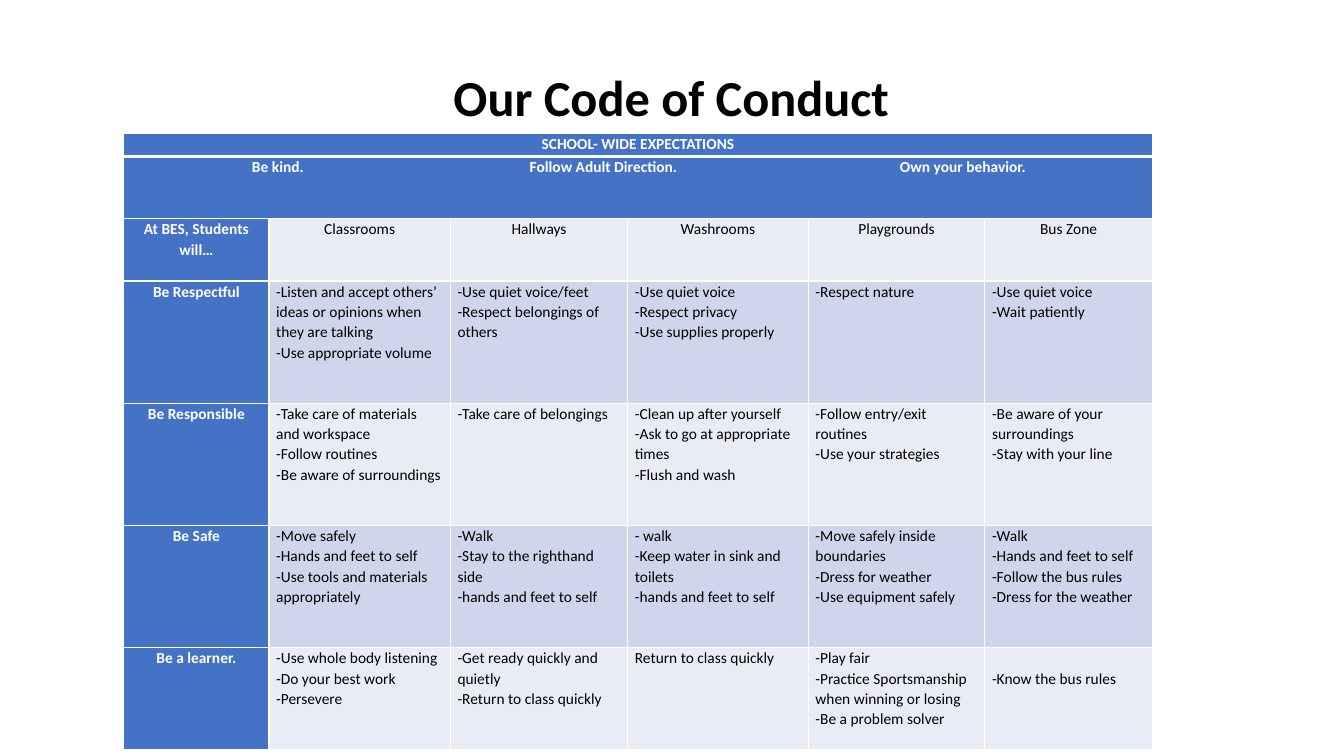
import pptx
import pptx.util
import pptx.dml.color
import pptx.enum.text
from lxml import etree
from pptx.oxml.ns import qn

Cm, Pt = pptx.util.Cm, pptx.util.Pt
RGBColor = pptx.dml.color.RGBColor
PP_ALIGN = pptx.enum.text.PP_ALIGN

TITLE = "Our Code of Conduct"
BANNER = "SCHOOL- WIDE EXPECTATIONS"
MOTTOS = ["Be kind.", "Follow Adult Direction.", "Own your behavior."]
MOTTO_TABS = [3.05, 10.05, 19.38]
PLACES = ["At BES, Students will…", "Classrooms", "Hallways", "Washrooms",
          "Playgrounds", "Bus Zone"]
EXPECTATIONS = [
    ["Be Respectful",
     "-Listen and accept others’ ideas or opinions when they are talking\n"
     "-Use appropriate volume",
     "-Use quiet voice/feet\n-Respect belongings of others",
     "-Use quiet voice\n-Respect privacy\n-Use supplies properly",
     "-Respect nature",
     "-Use quiet voice\n-Wait patiently"],
    ["Be Responsible",
     "-Take care of materials and workspace\n-Follow routines\n-Be aware of surroundings",
     "-Take care of belongings",
     "-Clean up after yourself\n-Ask to go at appropriate times\n-Flush and wash",
     "-Follow entry/exit routines\n-Use your strategies",
     "-Be aware of your surroundings\n-Stay with your line"],
    ["Be Safe",
     "-Move safely\n-Hands and feet to self\n-Use tools and materials appropriately",
     "-Walk\n-Stay to the righthand side\n-hands and feet to self",
     "- walk\n-Keep water in sink and toilets\n-hands and feet to self",
     "-Move safely inside boundaries\n-Dress for weather\n-Use equipment safely",
     "-Walk\n-Hands and feet to self\n-Follow the bus rules\n-Dress for the weather"],
    ["Be a learner.",
     "-Use whole body listening\n-Do your best work\n-Persevere",
     "-Get ready quickly and quietly\n-Return to class quickly",
     "Return to class quickly",
     "-Play fair\n-Practice Sportsmanship when winning or losing\n-Be a problem solver",
     "-Know the bus rules"],
]
COL_WIDTHS = [3.66, 4.57, 4.47, 4.55, 4.45, 4.22]
ROW_HEIGHTS = [0.58, 1.57, 1.57, 3.08, 3.08, 3.08, 2.57]
LINE_HEIGHT = 0.51

FONT = "Calibri"
BLACK = RGBColor(0x00, 0x00, 0x00)
WHITE = RGBColor(0xFF, 0xFF, 0xFF)
BLUE = RGBColor(0x44, 0x72, 0xC4)
BANDS = [RGBColor(0xE9, 0xEB, 0xF5), RGBColor(0xCF, 0xD5, 0xEA)]


def format_runs(p, size, color, bold):
    for r in p.runs:
        r.font.name, r.font.size, r.font.bold = FONT, Pt(size), bold
        r.font.color.rgb = color


def set_borders(cell, top, bottom):
    tcPr = cell._tc.get_or_add_tcPr()
    for side, width in (("L", 1), ("R", 1), ("T", top), ("B", bottom)):
        ln = etree.SubElement(tcPr, qn("a:ln" + side), w=str(Pt(width)))
        fill = etree.SubElement(ln, qn("a:solidFill"))
        etree.SubElement(fill, qn("a:srgbClr"), val=str(WHITE))


def add_tabs(p, stops):
    tabs = etree.SubElement(p._p.get_or_add_pPr(), qn("a:tabLst"))
    for stop in stops:
        etree.SubElement(tabs, qn("a:tab"), pos=str(Cm(stop)), algn="l")


def fill_cell(cell, text, fill, heading, centred):
    cell.margin_left = cell.margin_right = Cm(0.18)
    cell.margin_top = cell.margin_bottom = 0
    cell.fill.solid()
    cell.fill.fore_color.rgb = fill
    cell.text_frame.text = text
    for p in cell.text_frame.paragraphs:
        p.line_spacing = 1.07
        p.alignment = PP_ALIGN.CENTER if centred else PP_ALIGN.LEFT
        format_runs(p, 11, WHITE if heading else BLACK, heading)


def add_expectations(s):
    motto_line = "".join("\t" + motto for motto in MOTTOS)
    rows = [[BANNER], [motto_line], PLACES] + EXPECTATIONS
    table = s.shapes.add_table(len(rows), len(PLACES), Cm(3.12), Cm(3.36),
                               Cm(sum(COL_WIDTHS)), Cm(sum(ROW_HEIGHTS))).table
    for column, width in zip(table.columns, COL_WIDTHS):
        column.width = Cm(width)
    for row, height in zip(table.rows, ROW_HEIGHTS):
        row.height = Cm(height)
    for i, row in enumerate(rows):
        for j in range(len(PLACES)):
            set_borders(table.cell(i, j), 3 if i == 1 else 1, 3 if i == 0 else 1)
        if len(row) == 1:
            table.cell(i, 0).merge(table.cell(i, len(PLACES) - 1))
        for j, text in enumerate(row):
            heading = j == 0
            fill_cell(table.cell(i, j), text, BLUE if heading else BANDS[i % 2],
                      heading, i != 1 and (heading or i == 2))
    add_tabs(table.cell(1, 0).text_frame.paragraphs[0], MOTTO_TABS)
    table.cell(len(rows) - 1, len(PLACES) - 1).margin_top = Cm(LINE_HEIGHT)


def add_title(s):
    tf = s.shapes.add_textbox(Cm(8.46), Cm(1.55), Cm(16.92), Cm(1.8)).text_frame
    tf.word_wrap = True
    tf.text = TITLE
    tf.paragraphs[0].alignment = PP_ALIGN.CENTER
    format_runs(tf.paragraphs[0], 36, BLACK, True)


def main():
    prs = pptx.Presentation()
    prs.slide_width, prs.slide_height = Cm(33.87), Cm(19.05)
    s = prs.slides.add_slide(prs.slide_layouts[6])
    add_expectations(s)
    add_title(s)
    prs.save("out.pptx")


if __name__ == "__main__":
    main()
